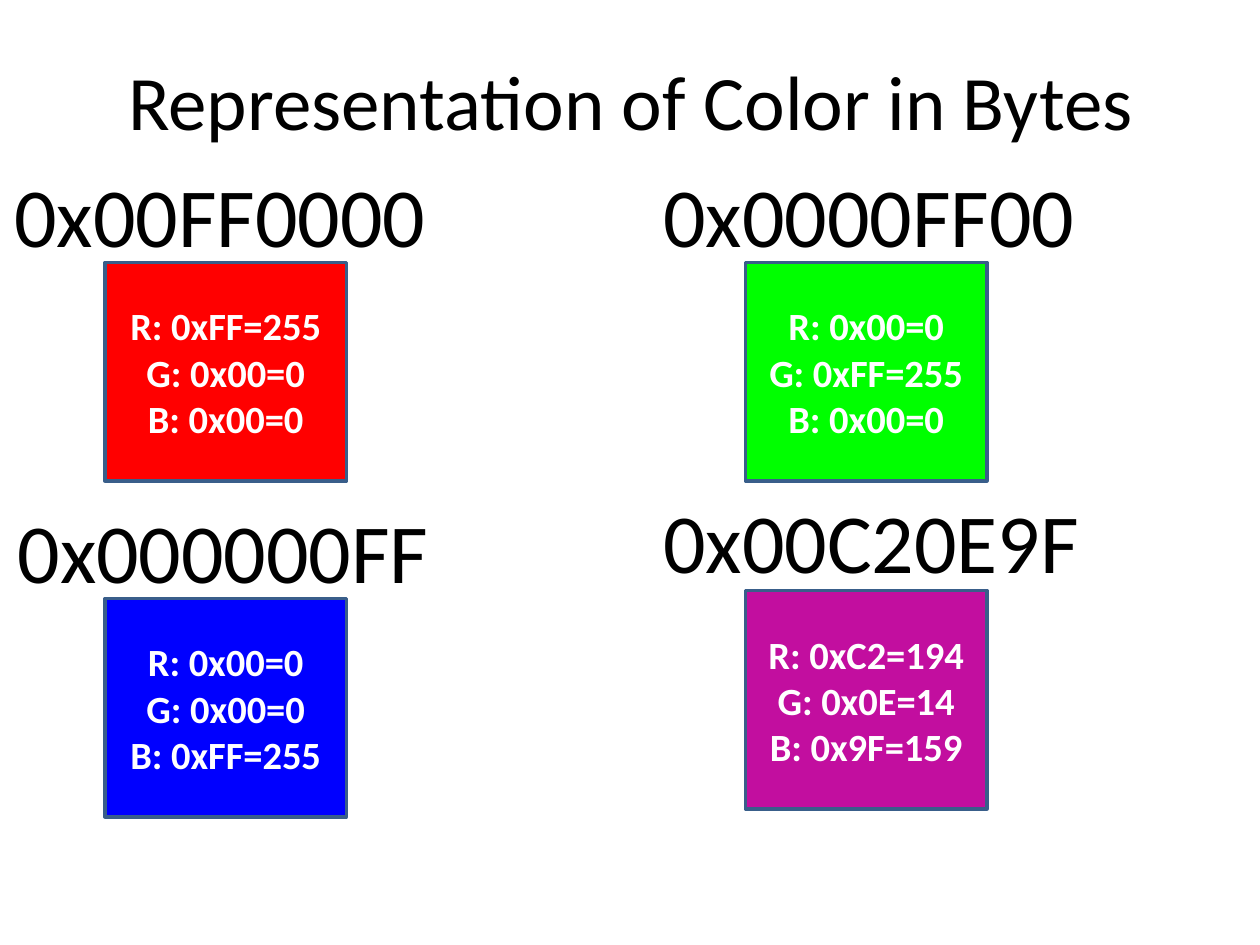
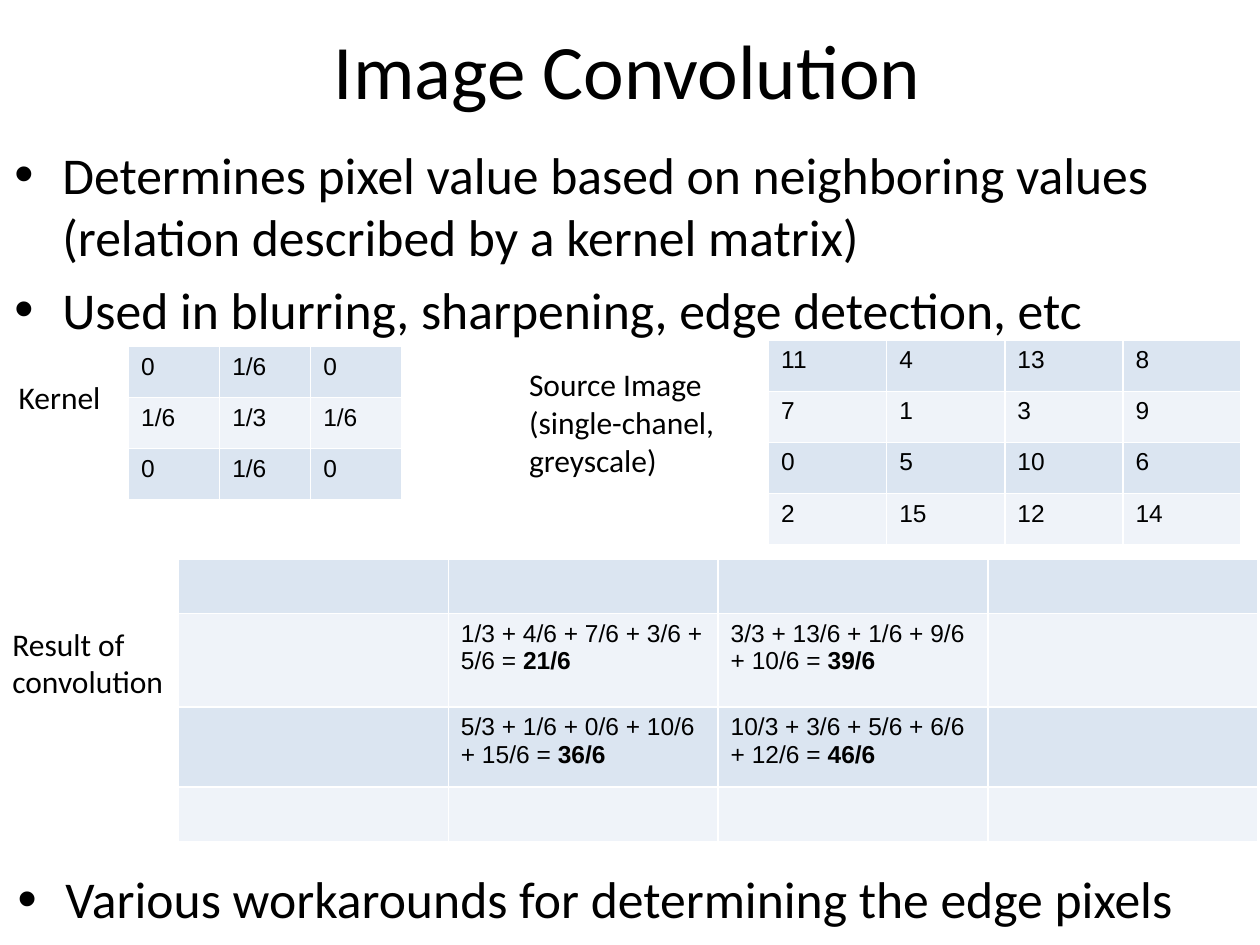
"""Build two slides on colour bytes and image convolution."""
from dataclasses import dataclass
from typing import Any

from lxml.etree import SubElement
from pptx import Presentation
from pptx.dml.color import RGBColor
from pptx.enum.shapes import MSO_SHAPE as Shape
from pptx.enum.text import MSO_ANCHOR as Anchor, PP_ALIGN as Align
from pptx.oxml.ns import qn
from pptx.util import Emu, Inches, Pt

SLIDE_WIDTH, SLIDE_HEIGHT = Inches(10), Inches(7.5)
COLUMN, ROW = SLIDE_WIDTH / 120, SLIDE_HEIGHT / 90

BLACK = RGBColor(0x00, 0x00, 0x00)
WHITE = RGBColor(0xFF, 0xFF, 0xFF)
RED = RGBColor(0xFF, 0x00, 0x00)
GREEN = RGBColor(0x00, 0xFF, 0x00)
BLUE = RGBColor(0x00, 0x00, 0xFF)
MAGENTA = RGBColor(0xC2, 0x0E, 0x9F)
OUTLINE = RGBColor(0x39, 0x5E, 0x8A)
BANDS = (RGBColor(0xDB, 0xE5, 0xF1), RGBColor(0xEF, 0xF3, 0xF9))

KERNEL = [["0", "1/6", "0"], ["1/6", "1/3", "1/6"], ["0", "1/6", "0"]]
PIXELS = [[11, 4, 13, 8], [7, 1, 3, 9], [0, 5, 10, 6], [2, 15, 12, 14]]


@dataclass(frozen=True)
class Area:
    """A place on the grid, in columns and rows."""
    left: float
    top: float
    width: float
    height: float

    def emu(self) -> tuple[Emu, Emu, Emu, Emu]:
        """Return left, top, width and height as lengths."""
        return (Emu(round(self.left * COLUMN)), Emu(round(self.top * ROW)),
                Emu(round(self.width * COLUMN)), Emu(round(self.height * ROW)))


@dataclass(frozen=True)
class Swatch:
    """A colour square with the place of its code above it."""
    color: RGBColor
    code_left: float
    code_top: float
    left: float
    top: float


@dataclass(frozen=True)
class Matrix:
    """A banded table of (plain, bold) texts with its column and row sizes."""
    left: float
    top: float
    column: float
    rows: list[float]
    cells: list[list[tuple[str, str]]]


SWATCHES = [
    Swatch(RED, 0.2, 15, 10, 25),
    Swatch(GREEN, 62, 15, 71, 25),
    Swatch(BLUE, 0.5, 47, 10, 57),
    Swatch(MAGENTA, 62, 46, 71, 56.25),
]


def write(frame: Any, text: str, *, size: float, font: str = "Calibri", color: RGBColor = BLACK,
          bold: bool = False, ending: str = "", align: Align = Align.LEFT,
          before: float = 0, bullet: bool = False) -> None:
    """Fill a text frame with one paragraph a line and an optional bold ending."""
    frame.word_wrap = True
    for number, line in enumerate(text.split("\n")):
        paragraph = frame.add_paragraph() if number else frame.paragraphs[0]
        paragraph.alignment, paragraph.space_before = align, Pt(before)
        for part, heavy in ((line, bold), (ending, True)):
            if part:
                run = paragraph.add_run()
                run.text = part
                run.font.size, run.font.name, run.font.bold = Pt(size), font, heavy
                run.font.color.rgb = color
        if bullet:
            add_bullet(paragraph)


def add_bullet(paragraph: Any) -> None:
    """Give a paragraph a round bullet and a hanging indent."""
    properties = paragraph._p.get_or_add_pPr()
    properties.set("marL", str(Inches(0.38)))
    properties.set("indent", str(-Inches(0.38)))
    SubElement(SubElement(properties, qn("a:buClr")), qn("a:srgbClr"), val=str(BLACK))
    SubElement(properties, qn("a:buSzPct"), val="106000")
    SubElement(properties, qn("a:buFont"), typeface="Arial")
    SubElement(properties, qn("a:buChar"), char="•")


def add_titled_slide(deck: Any, title: str, area: Area) -> Any:
    """Add a title-only slide with its title in place."""
    slide = deck.slides.add_slide(deck.slide_layouts[5])
    heading = slide.shapes.title
    heading.left, heading.top, heading.width, heading.height = area.emu()
    heading.text_frame.vertical_anchor = Anchor.MIDDLE
    write(heading.text_frame, title, size=44, align=Align.CENTER)
    return slide


def add_text(slide: Any, text: str, area: Area, **style: Any) -> None:
    """Add a text box."""
    write(slide.shapes.add_textbox(*area.emu()).text_frame, text, **style)


def add_swatch(slide: Any, swatch: Swatch) -> None:
    """Draw a colour square with its code and its channel values."""
    add_text(slide, f"0x00{swatch.color}", Area(swatch.code_left, swatch.code_top, 53, 9.5),
             size=48, before=9.6)
    square = slide.shapes.add_shape(
        Shape.RECTANGLE, *Area(swatch.left, swatch.top, 23, 20.8).emu())
    square.shadow.inherit = False
    square.fill.solid()
    square.fill.fore_color.rgb = swatch.color
    square.line.color.rgb, square.line.width = OUTLINE, Pt(2)
    square.text_frame.vertical_anchor = Anchor.MIDDLE
    channels = [f"{name}: 0x{value:02X}={value}" for name, value in zip("RGB", swatch.color)]
    write(square.text_frame, "\n".join(channels), size=22, color=WHITE, bold=True,
          align=Align.CENTER)


def add_borders(cell: Any) -> None:
    """Draw white lines on all four sides of a cell."""
    properties = cell._tc.get_or_add_tcPr()
    for side in ("lnL", "lnR", "lnT", "lnB"):
        line = SubElement(properties, qn(f"a:{side}"), w=str(Pt(1)))
        SubElement(SubElement(line, qn("a:solidFill")), qn("a:srgbClr"), val=str(WHITE))


def add_matrix(slide: Any, matrix: Matrix) -> None:
    """Draw a matrix as a table with alternating row fills."""
    count = len(matrix.cells[0])
    area = Area(matrix.left, matrix.top, matrix.column * count, sum(matrix.rows))
    table = slide.shapes.add_table(len(matrix.rows), count, *area.emu()).table
    for number, (height, values) in enumerate(zip(matrix.rows, matrix.cells)):
        table.rows[number].height = Emu(round(height * ROW))
        for cell, (plain, ending) in zip(table.rows[number].cells, values):
            add_borders(cell)
            cell.fill.solid()
            cell.fill.fore_color.rgb = BANDS[number % 2]
            write(cell.text_frame, plain, size=14, font="Arial", ending=ending)


def plain_cells(values: list[list[Any]]) -> list[list[tuple[str, str]]]:
    """Turn values into cells without a bold ending."""
    return [[(str(value), "") for value in row] for row in values]


def convolve(row: int, column: int) -> tuple[str, str]:
    """Spell out the kernel sum for a pixel; edge pixels stay empty."""
    last = len(PIXELS) - 1
    if row in (0, last) or column in (0, last):
        return "", ""
    center = PIXELS[row][column]
    neighbors = [PIXELS[row - 1][column], PIXELS[row][column - 1],
                 PIXELS[row][column + 1], PIXELS[row + 1][column]]
    terms = [f"{center}/3"] + [f"{value}/6" for value in neighbors]
    return " + ".join(terms) + " = ", f"{2 * center + sum(neighbors)}/6"


def build_color_slide(deck: Any) -> None:
    """Show four colours as bytes."""
    slide = add_titled_slide(deck, "Representation of Color in Bytes", Area(6.1, 2, 108, 15))
    for swatch in SWATCHES:
        add_swatch(slide, swatch)


def build_convolution_slide(deck: Any) -> None:
    """Show a kernel, a source image and the convolved result."""
    slide = add_titled_slide(deck, "Image Convolution", Area(5.75, 0, 108, 13))
    points = {"size": 29.5, "before": 6.4, "bullet": True}
    add_text(slide, "Determines pixel value based on neighboring values "
             "(relation described by a kernel matrix)\n"
             "Used in blurring, sharpening, edge detection, etc", Area(0.2, 13, 120, 17), **points)
    add_text(slide, "Various workarounds for determining the edge pixels",
             Area(0.5, 82, 119.5, 8), **points)
    add_text(slide, "Kernel", Area(0.6, 35.4, 13, 4.8), size=18)
    add_text(slide, "Source Image (single-chanel, greyscale)", Area(49.2, 34.2, 21, 12), size=18)
    add_text(slide, "Result of convolution", Area(0, 58.9, 17, 8.5), size=18)
    span = range(len(PIXELS))
    result = [[convolve(row, column) for column in span] for row in span]
    add_matrix(slide, Matrix(12.25, 33, 8.67, [4.87] * 3, plain_cells(KERNEL)))
    add_matrix(slide, Matrix(73.2, 32.4, 11.25, [4.87] * 4, plain_cells(PIXELS)))
    add_matrix(slide, Matrix(17, 53.25, 25.7, [5.2, 8.9, 7.6, 5.2], result))


def main() -> None:
    """Build and save the slides."""
    deck = Presentation()
    deck.slide_width, deck.slide_height = SLIDE_WIDTH, SLIDE_HEIGHT
    build_color_slide(deck)
    build_convolution_slide(deck)
    deck.save("out.pptx")


if __name__ == "__main__":
    main()
